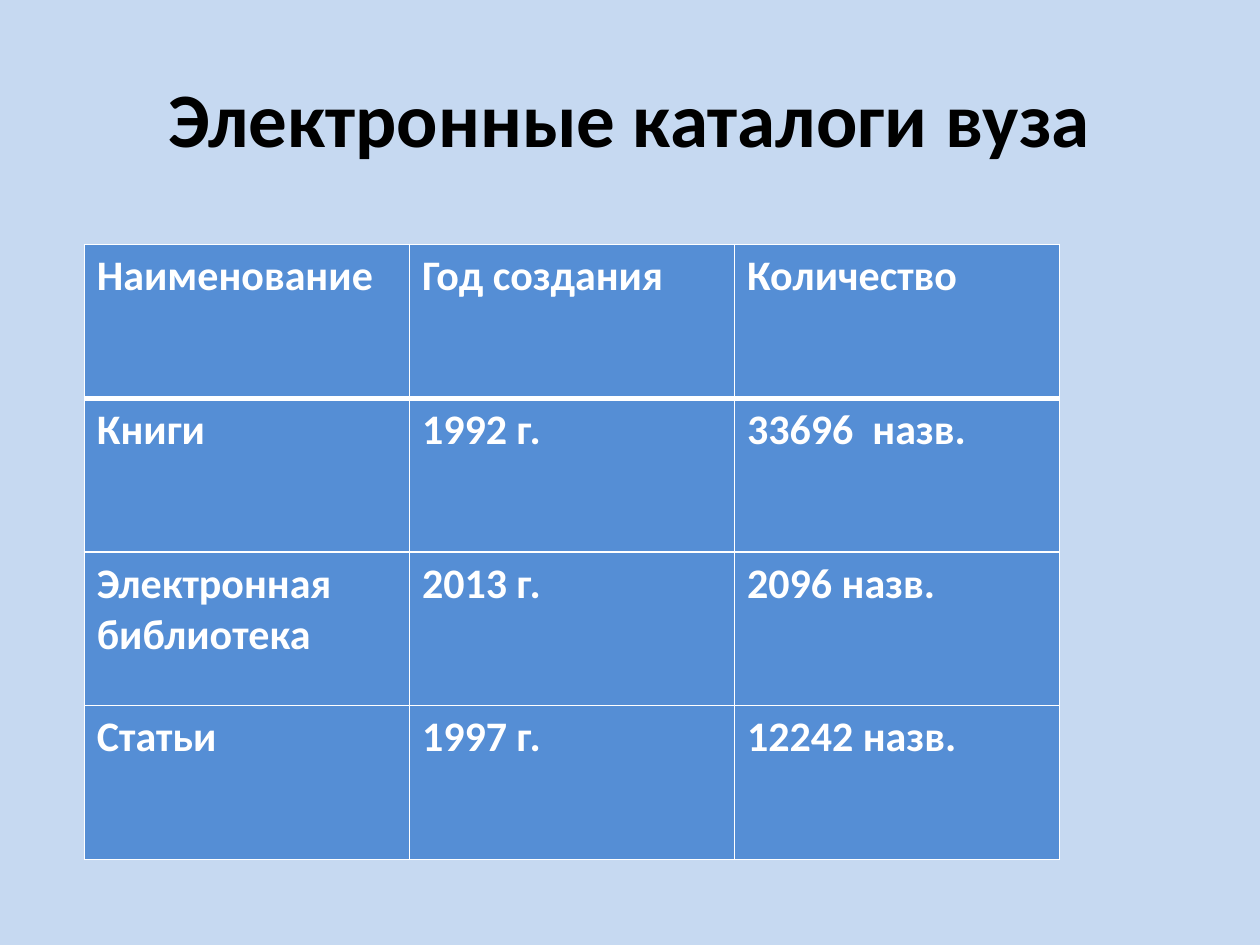
import pptx
import pptx.dml.color
import pptx.enum.text
import pptx.oxml
import pptx.oxml.ns
import pptx.util

Pt = pptx.util.Pt
BACKGROUND, CELL_BLUE, WHITE, BLACK = "C6D9F1", "558ED5", "FFFFFF", "000000"
CATALOGUES = [
    ["Наименование", "Год создания", "Количество"],
    ["Книги", "1992 г.", "33696  назв."],
    ["Электронная\nбиблиотека", "2013 г.", "2096 назв."],
    ["Статьи", "1997 г.", "12242 назв."],
]


def paint(fill, color):
    fill.solid()
    fill.fore_color.rgb = pptx.dml.color.RGBColor.from_string(color)


def write(frame, text, size, color, align):
    frame.text = text
    for paragraph in frame.paragraphs:
        paragraph.alignment = align
        font_format = {"name": "Calibri", "size": Pt(size), "bold": True}
        for attribute, value in font_format.items():
            setattr(paragraph.font, attribute, value)
        paint(paragraph.font.fill, color)


def add_borders(cell, widths):
    """Draw white borders; widths maps L, R, T, B, in that order, to points."""
    properties = cell._tc.get_or_add_tcPr()
    for side, width in widths.items():
        properties.append(pptx.oxml.parse_xml(
            f'<a:ln{side} {pptx.oxml.ns.nsdecls("a")} w="{Pt(width)}">'
            f'<a:solidFill><a:srgbClr val="{WHITE}"/></a:solidFill></a:ln{side}>'))


def place_title(slide, left, top, width, height):
    title = slide.shapes.title
    box = {"left": left, "top": top, "width": width, "height": height}
    for attribute, value in box.items():
        setattr(title, attribute, Pt(value))
    title.text_frame.vertical_anchor = pptx.enum.text.MSO_ANCHOR.MIDDLE
    write(title.text_frame, "Электронные каталоги вуза", 44, BLACK,
          pptx.enum.text.PP_ALIGN.CENTER)


def place_catalogues(slide, left, top, width, height):
    table = slide.shapes.add_table(
        len(CATALOGUES), len(CATALOGUES[0]),
        Pt(left), Pt(top), Pt(width), Pt(height)).table
    for row, texts in enumerate(CATALOGUES):
        for column, text in enumerate(texts):
            cell = table.cell(row, column)
            write(cell.text_frame, text, 24, WHITE,
                  pptx.enum.text.PP_ALIGN.LEFT)
            add_borders(cell, {"L": 1, "R": 1,
                               "T": 3 if row == 1 else 1,
                               "B": 3 if row == 0 else 1})
            paint(cell.fill, CELL_BLUE)


def main():
    presentation = pptx.Presentation()
    presentation.slide_width, presentation.slide_height = Pt(720), Pt(540)
    slide = presentation.slides.add_slide(presentation.slide_layouts[5])
    paint(slide.background.fill, BACKGROUND)
    place_title(slide, 36, 21.6, 648, 90)
    place_catalogues(slide, 48.2, 139.7, 557.3, 351.4)
    presentation.save("out.pptx")


if __name__ == "__main__":
    main()
